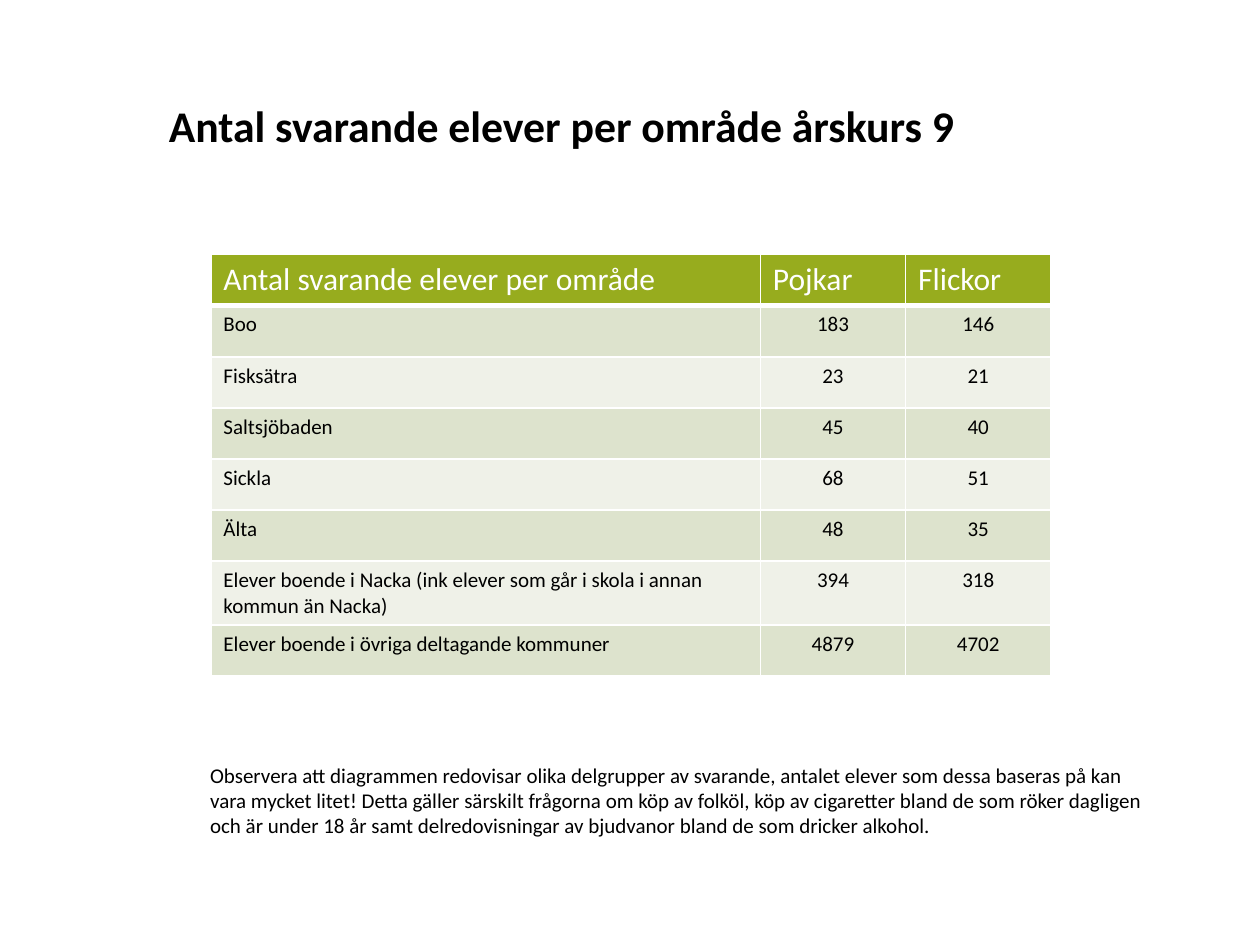
"""Build a slide with a table of responding pupils per area."""
from dataclasses import dataclass
from typing import Any

import lxml.etree
import pptx
import pptx.dml.color
import pptx.enum.text
import pptx.oxml.ns
import pptx.util

Pt = pptx.util.Pt
ALIGN = pptx.enum.text.PP_ALIGN
ANCHOR = pptx.enum.text.MSO_ANCHOR
AUTO_SIZE = pptx.enum.text.MSO_AUTO_SIZE

BLACK, WHITE, GREEN = "000000", "FFFFFF", "97AC1E"
BANDS = ("DDE3CD", "EFF1E8")
COLUMN_WIDTHS = (314, 83, 83)
ROW_HEIGHT = 29.2
TITLE = "Antal svarande elever per område årskurs 9"
HEADINGS = ("Antal svarande elever per område", "Pojkar", "Flickor")
NOTE = (
    "Observera att diagrammen redovisar olika delgrupper av svarande, antalet elever "
    "som dessa baseras på kan vara mycket litet! Detta gäller särskilt frågorna om köp "
    "av folköl, köp av cigaretter bland de som röker dagligen och är under 18 år samt "
    "delredovisningar av bjudvanor bland de som dricker alkohol."
)


@dataclass(frozen=True)
class Area:
    """Number of responding boys and girls in one area."""

    name: str
    boys: int
    girls: int


AREAS = (
    Area("Boo", 183, 146),
    Area("Fisksätra", 23, 21),
    Area("Saltsjöbaden", 45, 40),
    Area("Sickla", 68, 51),
    Area("Älta", 48, 35),
    Area("Elever boende i Nacka (ink elever som går i skola i annan kommun än Nacka)", 394, 318),
    Area("Elever boende i övriga deltagande kommuner", 4879, 4702),
)


def rgb(value: str) -> pptx.dml.color.RGBColor:
    """Turn a hex string into a colour."""
    return pptx.dml.color.RGBColor.from_string(value)


def write(frame: Any, text: str, size: float, color: str = BLACK,
          bold: bool = False, align: Any = ALIGN.LEFT) -> Any:
    """Write one formatted paragraph and return it."""
    para = frame.paragraphs[0]
    para.alignment = align
    span = para.add_run()
    span.text = text
    formats = {"name": "Calibri", "size": Pt(size), "bold": bold}
    for attribute, value in formats.items():
        setattr(span.font, attribute, value)
    span.font.color.rgb = rgb(color)
    return para


def add_borders(cell: Any, bottom: float) -> None:
    """Give a cell white borders, with its own bottom width."""
    properties = cell._tc.get_or_add_tcPr()
    for side, width in {"L": 1, "R": 1, "T": 1, "B": bottom}.items():
        line = lxml.etree.SubElement(
            properties, pptx.oxml.ns.qn(f"a:ln{side}"), w=str(Pt(width)))
        fill = lxml.etree.SubElement(line, pptx.oxml.ns.qn("a:solidFill"))
        lxml.etree.SubElement(fill, pptx.oxml.ns.qn("a:srgbClr"), val=WHITE)


def add_area_table(page: Any) -> None:
    """Add the table with one row for each area."""
    rows = [HEADINGS] + [(area.name, area.boys, area.girls) for area in AREAS]
    table = page.shapes.add_table(
        len(rows), len(HEADINGS), Pt(120.5), Pt(145.5),
        Pt(sum(COLUMN_WIDTHS)), Pt(ROW_HEIGHT * len(rows))).table
    for column, width in zip(table.columns, COLUMN_WIDTHS):
        column.width = Pt(width)
    for row_index, values in enumerate(rows):
        table.rows[row_index].height = Pt(ROW_HEIGHT)
        heading = row_index == 0
        background = GREEN if heading else BANDS[(row_index - 1) % 2]
        for column_index, value in enumerate(values):
            cell = table.cell(row_index, column_index)
            centered = column_index > 0 and not heading
            add_borders(cell, 3 if heading else 1)
            cell.fill.solid()
            cell.fill.fore_color.rgb = rgb(background)
            write(cell.text_frame, str(value), 18 if heading else 12,
                  WHITE if heading else BLACK,
                  align=ALIGN.CENTER if centered else ALIGN.LEFT)


def add_title(page: Any) -> None:
    """Place and format the slide title."""
    title = page.shapes.title
    place = {"left": 89.3, "top": 21.6, "width": 611.3, "height": 90}
    for attribute, value in place.items():
        setattr(title, attribute, Pt(value))
    frame = title.text_frame
    formats = {"vertical_anchor": ANCHOR.MIDDLE, "auto_size": AUTO_SIZE.NONE, "word_wrap": True}
    for attribute, value in formats.items():
        setattr(frame, attribute, value)
    write(frame, TITLE, 25, bold=True).line_spacing = Pt(40)


def add_note(page: Any) -> None:
    """Add the remark below the table."""
    box = page.shapes.add_textbox(Pt(113), Pt(432), Pt(558.7), Pt(51))
    box.text_frame.word_wrap = True
    box.text_frame.auto_size = AUTO_SIZE.SHAPE_TO_FIT_TEXT
    write(box.text_frame, NOTE, 12)


def main() -> None:
    """Build and save the deck."""
    deck = pptx.Presentation()
    deck.slide_width, deck.slide_height = Pt(720), Pt(540)
    page = deck.slides.add_slide(deck.slide_layouts.get_by_name("Title Only"))
    add_title(page)
    add_area_table(page)
    add_note(page)
    deck.save("out.pptx")


if __name__ == "__main__":
    main()
